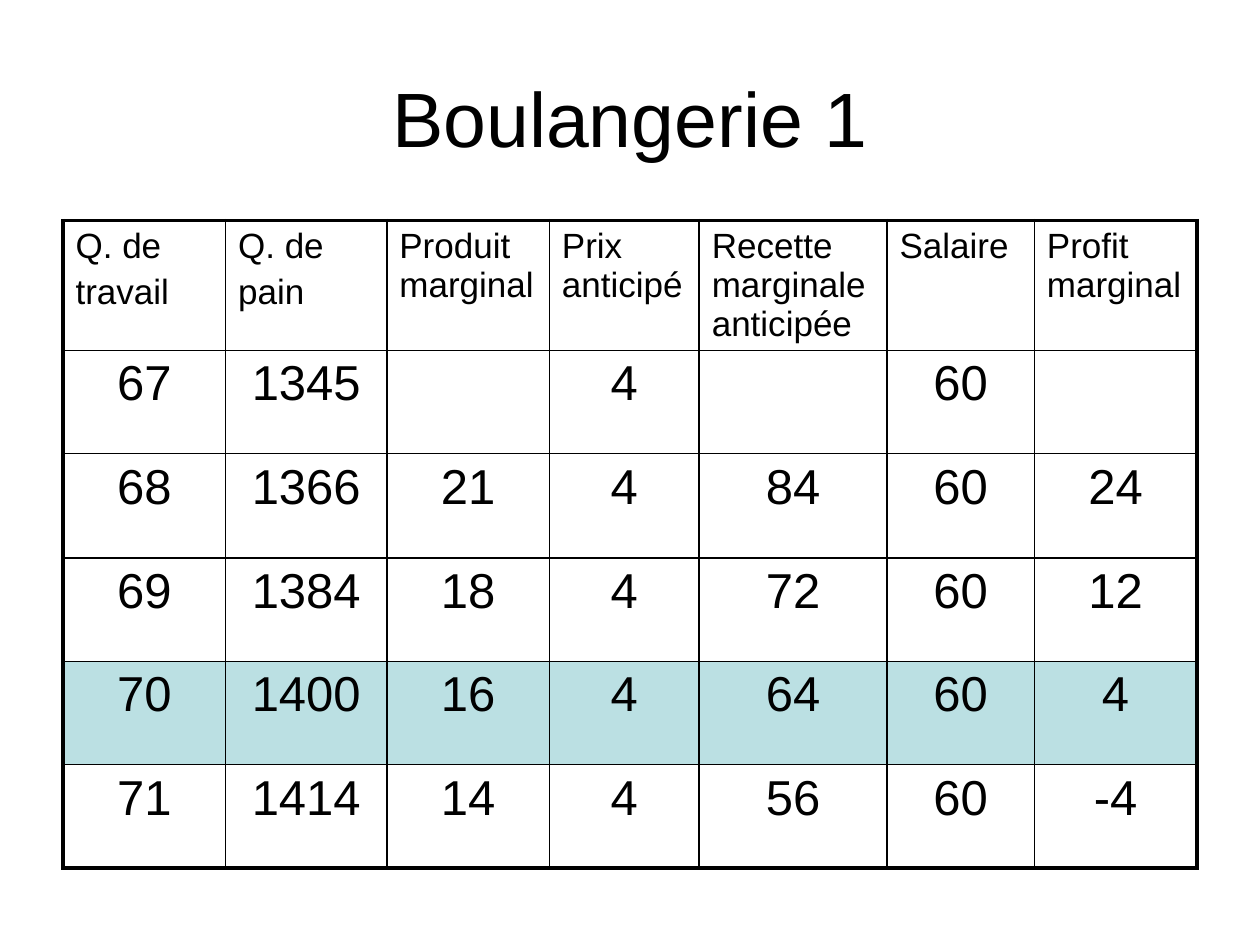
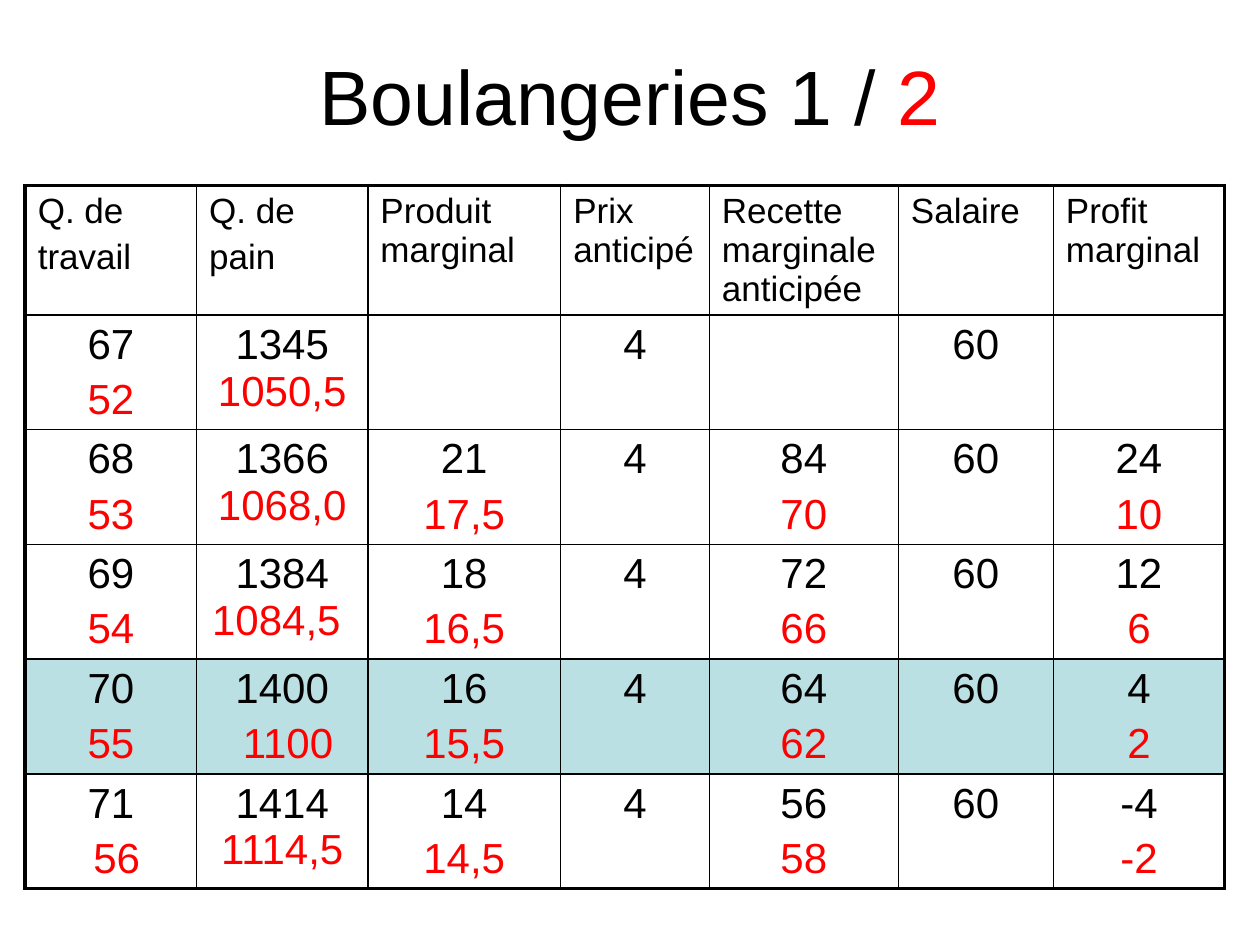
from lxml.etree import SubElement
from pptx import Presentation
from pptx.dml.color import RGBColor
from pptx.enum.text import MSO_ANCHOR, MSO_AUTO_SIZE, PP_ALIGN
from pptx.oxml.ns import qn
from pptx.util import Inches, Pt

COLORS = {"text": "000000", "second": "FF0000", "highlight": "BBE0E3", "border": "000000"}
FONT = "Arial"
TITLE_SIZE, HEADER_SIZE = 44, 20
INNER_LINE, OUTER_LINE = 1, 2.25
ROW_HEIGHTS = [0.82, 0.82, 0.83, 0.82, 0.82, 0.82]
HIGHLIGHT_ROW = 4
BREAD_COL = 1

HEADERS = [["Q. de", "travail"], ["Q. de", "pain"], ["Produit marginal"], ["Prix anticipé"],
           ["Recette marginale anticipée"], ["Salaire"], ["Profit marginal"]]
BAKERY_1 = [
    ["67", "1345", "", "4", "", "60", ""],
    ["68", "1366", "21", "4", "84", "60", "24"],
    ["69", "1384", "18", "4", "72", "60", "12"],
    ["70", "1400", "16", "4", "64", "60", "4"],
    ["71", "1414", "14", "4", "56", "60", "-4"],
]
BAKERY_2 = [
    ["52", "1050,5", "", "", "", "", ""],
    ["53", "1068,0", "17,5", "", "70", "", "10"],
    ["54", "1084,5 ", "16,5", "", "66", "", "6"],
    ["55", " 1100", "15,5", "", "62", "", "2"],
    [" 56", "1114,5", "14,5", "", "58", "", "-2"],
]
# First-line indent of the upper value in a pair, in inches
PAIR_INDENT = -0.19
INDENT_EXCEPTIONS = {"84": -0.09, "16": -0.09, "1400": -0.09, "71": 0}


class Deck:
    def __init__(self):
        self.prs = Presentation()
        self.prs.slide_width, self.prs.slide_height = Inches(10), Inches(7.5)
        self.s = None

    def run(self, p, text, size, color="text"):
        r = p.add_run()
        r.text = text
        r.font.name, r.font.size = FONT, Pt(size)
        r.font.color.rgb = RGBColor.from_string(COLORS[color])

    def slide(self, top, runs):
        """Add a slide with its title, given as (text, color) runs."""
        self.s = self.prs.slides.add_slide(self.prs.slide_layouts[5])
        sp = self.s.shapes.title
        sp.left, sp.top, sp.width, sp.height = Inches(0.5), Inches(top), Inches(9), Inches(1.25)
        tf = sp.text_frame
        tf.word_wrap, tf.auto_size = True, MSO_AUTO_SIZE.NONE
        tf.vertical_anchor = MSO_ANCHOR.MIDDLE
        p = tf.paragraphs[0]
        p.alignment = PP_ALIGN.CENTER
        for text, color in runs:
            self.run(p, text, TITLE_SIZE, color)

    def cell_text(self, cell, paragraphs, size, align):
        """Fill a cell; each paragraph is (first-line indent, runs)."""
        tf = cell.text_frame
        for i, (indent, runs) in enumerate(paragraphs):
            p = tf.add_paragraph() if i else tf.paragraphs[0]
            p.alignment, p.space_before = align, Pt(size * 0.2)
            if indent:
                p._p.get_or_add_pPr().set("indent", str(Inches(indent)))
            for text, color in runs:
                self.run(p, text, size, color)

    def cell_borders(self, cell, outer):
        """Draw four borders, heavier on the sides named in outer."""
        tcPr = cell._tc.get_or_add_tcPr()
        for i, side in enumerate("LRTB"):
            width = OUTER_LINE if side in outer else INNER_LINE
            ln = SubElement(tcPr, qn(f"a:ln{side}"), w=str(Pt(width)))
            fill = SubElement(ln, qn("a:solidFill"))
            SubElement(fill, qn("a:srgbClr"), val=COLORS["border"])
            tcPr.insert(i, ln)

    def table(self, left, top, width, height, cols, body, size):
        """Add the table: shared header row, then body cells as paragraph lists."""
        header = [[(0, [(line, "text")]) for line in lines] for lines in HEADERS]
        rows = [header] + body
        frame = self.s.shapes.add_table(len(rows), len(cols), Inches(left), Inches(top),
                                        Inches(width), Inches(height))
        tbl = frame.table
        tbl.first_row = tbl.horz_banding = False
        for column, w in zip(tbl.columns, cols):
            column.width = Inches(w)
        for row, h in zip(tbl.rows, ROW_HEIGHTS):
            row.height = Inches(h)
        frame.width, frame.height = Inches(width), Inches(height)

        for i, row in enumerate(rows):
            for j, paragraphs in enumerate(row):
                cell = tbl.cell(i, j)
                if i == HIGHLIGHT_ROW:
                    cell.fill.solid()
                    cell.fill.fore_color.rgb = RGBColor.from_string(COLORS["highlight"])
                else:
                    cell.fill.background()
                edges = {"L": j == 0, "R": j == len(cols) - 1, "T": i == 0, "B": i == len(rows) - 1}
                self.cell_borders(cell, [side for side, is_edge in edges.items() if is_edge])
                self.cell_text(cell, paragraphs, size if i else HEADER_SIZE,
                               PP_ALIGN.CENTER if i else PP_ALIGN.LEFT)


def single(value):
    return [(0, [(value, "text")])] if value else []


def pair(first, second, col):
    """Bakery 1 in black above bakery 2 in red."""
    if not second:
        return single(first)
    if col == BREAD_COL and not second.startswith(" "):
        return [(0, [(first + " ", "text"), (second, "second")])]
    indent = INDENT_EXCEPTIONS.get(first, PAIR_INDENT)
    return [(indent, [(first, "text")]), (0, [(second, "second")])]


def main():
    deck = Deck()

    # Bakery 1 alone
    deck.slide(0.3, [("Boulangerie 1", "text")])
    deck.table(0.5, 1.75, 9, 5.23, [1.29, 1.28, 1.29, 1.19, 1.49, 1.17, 1.29],
               [[single(v) for v in row] for row in BAKERY_1], 28)

    # Both bakeries
    deck.slide(0.13, [("Boulangeries 1 / ", "text"), ("2", "second")])
    both = [[pair(a, b, j) for j, (a, b) in enumerate(zip(row_1, row_2))]
            for row_1, row_2 in zip(BAKERY_1, BAKERY_2)]
    deck.table(0.2, 1.47, 9.53, 6, [1.36, 1.36, 1.53, 1.18, 1.5, 1.23, 1.36], both, 24)

    deck.prs.save("out.pptx")


if __name__ == "__main__":
    main()
